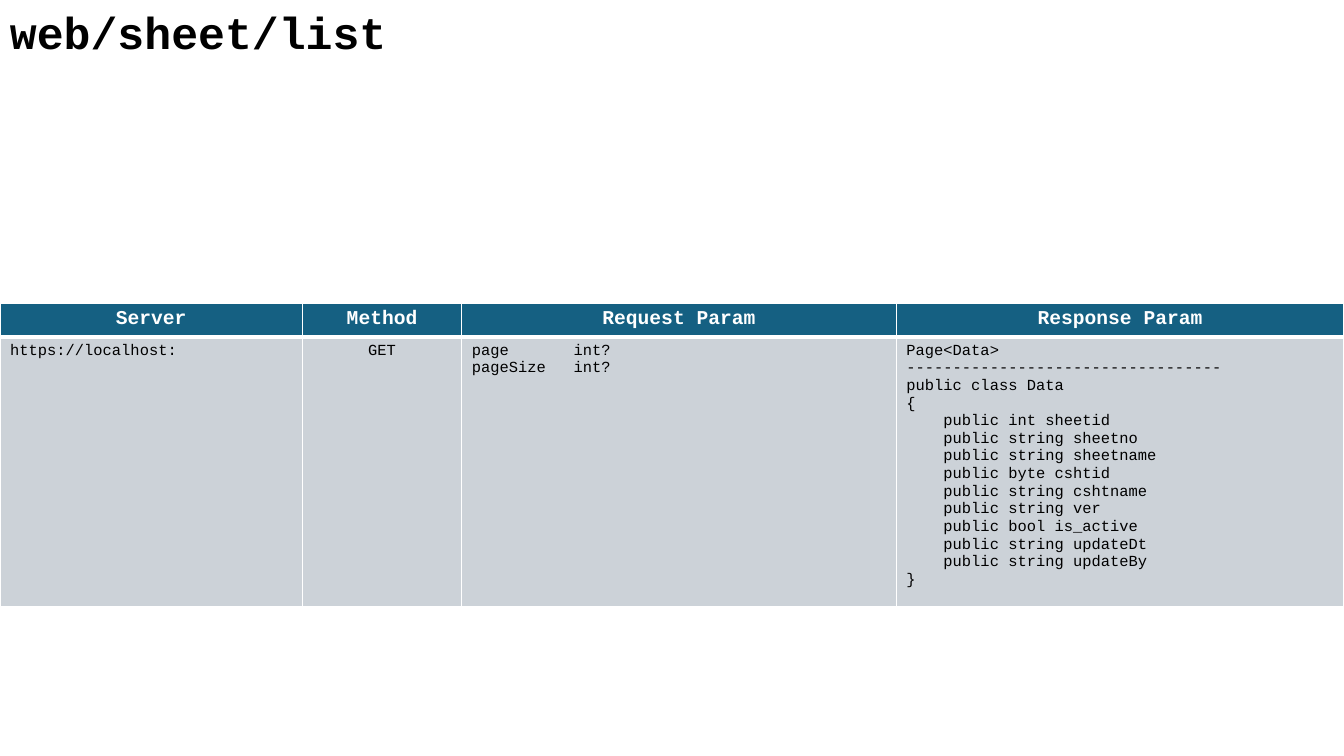
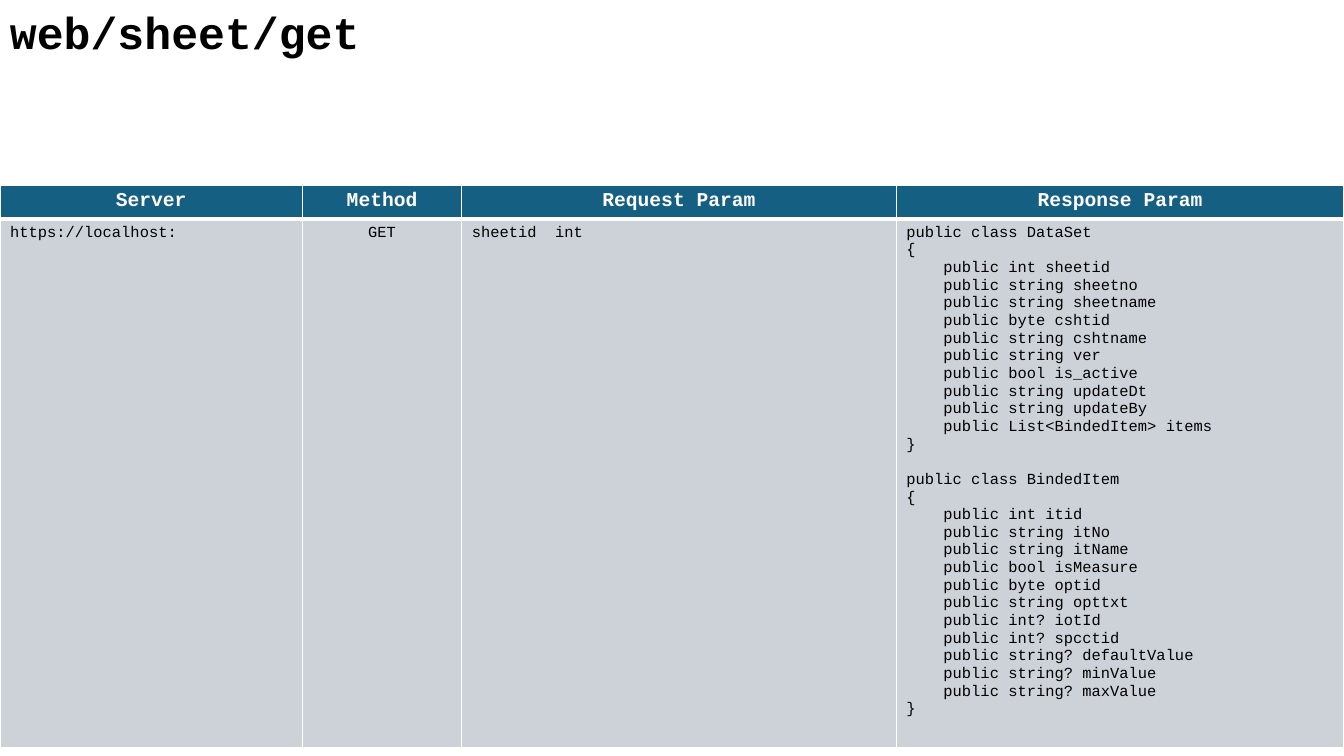
from dataclasses import dataclass
from typing import Optional

from lxml.etree import SubElement as add_element
from pptx import Presentation
from pptx.dml.color import RGBColor as Rgb
from pptx.enum.text import MSO_AUTO_SIZE as AutoSize, PP_ALIGN as Align
from pptx.oxml.ns import qn
from pptx.util import Inches, Pt


@dataclass(frozen=True)
class Theme:
    font: str = "Courier New"
    ink: str = "000000"
    paper: str = "FFFFFF"
    header_fill: str = "156082"
    body_fill: str = "CCD2D8"
    title_size: float = 32
    header_size: float = 14
    code_size: float = 11
    code_line: float = 12.6
    thin_rule: float = 1
    thick_rule: float = 3


@dataclass(frozen=True)
class Column:
    heading: str
    width: float
    align: Align = Align.LEFT


@dataclass(frozen=True)
class Endpoint:
    title: str
    table_top: float
    body_height: float
    request: list[str]
    tab_column: int
    response: list[list[str]]
    server: str = "https://localhost:"
    method: str = "GET"


THEME = Theme()
SLIDE_WIDTH, SLIDE_HEIGHT = 13.33, 7.5
TITLE_WIDTH, TITLE_HEIGHT = 9.45, 0.64
HEADER_HEIGHT = 0.33
# Courier New glyphs are 0.6 em wide
CODE_CHARACTER = THEME.code_size * 0.6

COLUMNS = [
    Column("Server", 3),
    Column("Method", 1.58, Align.CENTER),
    Column("Request Param", 4.31),
    Column("Response Param", 4.44),
]


def class_listing(name: str, fields: list[str]) -> list[str]:
    """Return the lines of a class whose fields are all public."""
    members = [f"    public {field}" for field in fields]
    return [f"public class {name}", "{", *members, "}"]


SHEET_FIELDS = [
    "int sheetid", "string sheetno", "string sheetname", "byte cshtid",
    "string cshtname", "string ver", "bool is_active", "string updateDt",
    "string updateBy",
]
ITEM_FIELDS = [
    "int itid", "string itNo", "string itName", "bool isMeasure",
    "byte optid", "string opttxt", "int? iotId", "int? spcctid",
    "string? defaultValue", "string? minValue", "string? maxValue",
]

ENDPOINTS = [
    Endpoint(
        title="web/sheet/list", table_top=3.01, body_height=2.67,
        request=["page\tint?", "pageSize\tint?"], tab_column=11,
        response=[["Page<Data>", "-" * 34, *class_listing("Data", SHEET_FIELDS)]],
    ),
    Endpoint(
        title="web/sheet/get", table_top=1.84, body_height=5.24,
        request=["sheetid\tint"], tab_column=9,
        response=[
            class_listing("DataSet", [*SHEET_FIELDS, "List<BindedItem> items"]),
            class_listing("BindedItem", ITEM_FIELDS),
        ],
    ),
]


# Text
def write_blocks(frame, blocks: list[list[str]], *, size: float, color: str,
                 bold: bool = False, align: Align = Align.LEFT,
                 tab: Optional[float] = None) -> None:
    """Write blocks of lines, set apart by the height of one code line."""
    lines = [(line, block_index > 0 and line_index == 0)
             for block_index, block in enumerate(blocks)
             for line_index, line in enumerate(block)]
    for index, (line, opens_block) in enumerate(lines):
        para = frame.add_paragraph() if index else frame.paragraphs[0]
        para.alignment = align
        if tab is not None:
            properties = para._p.get_or_add_pPr()
            tabs = add_element(properties, qn("a:tabLst"))
            add_element(tabs, qn("a:tab"), pos=str(Pt(tab)), algn="l")
        if opens_block:
            para.space_before = Pt(THEME.code_line)
        span = para.add_run()
        span.text = line
        span.font.name = THEME.font
        span.font.size = Pt(size)
        span.font.bold = bold
        span.font.color.rgb = Rgb.from_string(color)


# Table cells
def paint_cell(cell, fill: str, *, top: float, bottom: float) -> None:
    """Draw the borders of a cell, then fill it."""
    properties = cell._tc.get_or_add_tcPr()
    widths = {"L": THEME.thin_rule, "R": THEME.thin_rule, "T": top, "B": bottom}
    for side, width in widths.items():
        border = add_element(properties, qn(f"a:ln{side}"), w=str(Pt(width)))
        solid = add_element(border, qn("a:solidFill"))
        add_element(solid, qn("a:srgbClr"), val=THEME.paper)
    cell.fill.solid()
    cell.fill.fore_color.rgb = Rgb.from_string(fill)


def add_title(page, text: str) -> None:
    box = page.shapes.add_textbox(0, 0, Inches(TITLE_WIDTH), Inches(TITLE_HEIGHT))
    box.text_frame.word_wrap = True
    box.text_frame.auto_size = AutoSize.SHAPE_TO_FIT_TEXT
    write_blocks(box.text_frame, [[text]], size=THEME.title_size,
                 color=THEME.ink, bold=True)


def add_endpoint_table(page, endpoint: Endpoint) -> None:
    heights = [HEADER_HEIGHT, endpoint.body_height]
    table = page.shapes.add_table(
        len(heights), len(COLUMNS), 0, Inches(endpoint.table_top),
        Inches(SLIDE_WIDTH), Inches(sum(heights))).table
    for row, height in zip(table.rows, heights):
        row.height = Inches(height)

    contents = [[[endpoint.server]], [[endpoint.method]],
                [endpoint.request], endpoint.response]
    for index, (column, blocks) in enumerate(zip(COLUMNS, contents)):
        table.columns[index].width = Inches(column.width)
        header, body = table.cell(0, index), table.cell(1, index)
        paint_cell(header, THEME.header_fill,
                   top=THEME.thin_rule, bottom=THEME.thick_rule)
        paint_cell(body, THEME.body_fill,
                   top=THEME.thick_rule, bottom=THEME.thin_rule)
        write_blocks(header.text_frame, [[column.heading]], bold=True,
                     size=THEME.header_size, color=THEME.paper,
                     align=Align.CENTER)
        tabbed = blocks == [endpoint.request]
        write_blocks(body.text_frame, blocks, size=THEME.code_size,
                     color=THEME.ink, align=column.align,
                     tab=endpoint.tab_column * CODE_CHARACTER if tabbed else None)


def main() -> None:
    deck = Presentation()
    deck.slide_width, deck.slide_height = Inches(SLIDE_WIDTH), Inches(SLIDE_HEIGHT)
    blank = deck.slide_layouts[6]
    for endpoint in ENDPOINTS:
        page = deck.slides.add_slide(blank)
        add_title(page, endpoint.title)
        add_endpoint_table(page, endpoint)
    deck.save("out.pptx")


if __name__ == "__main__":
    main()
